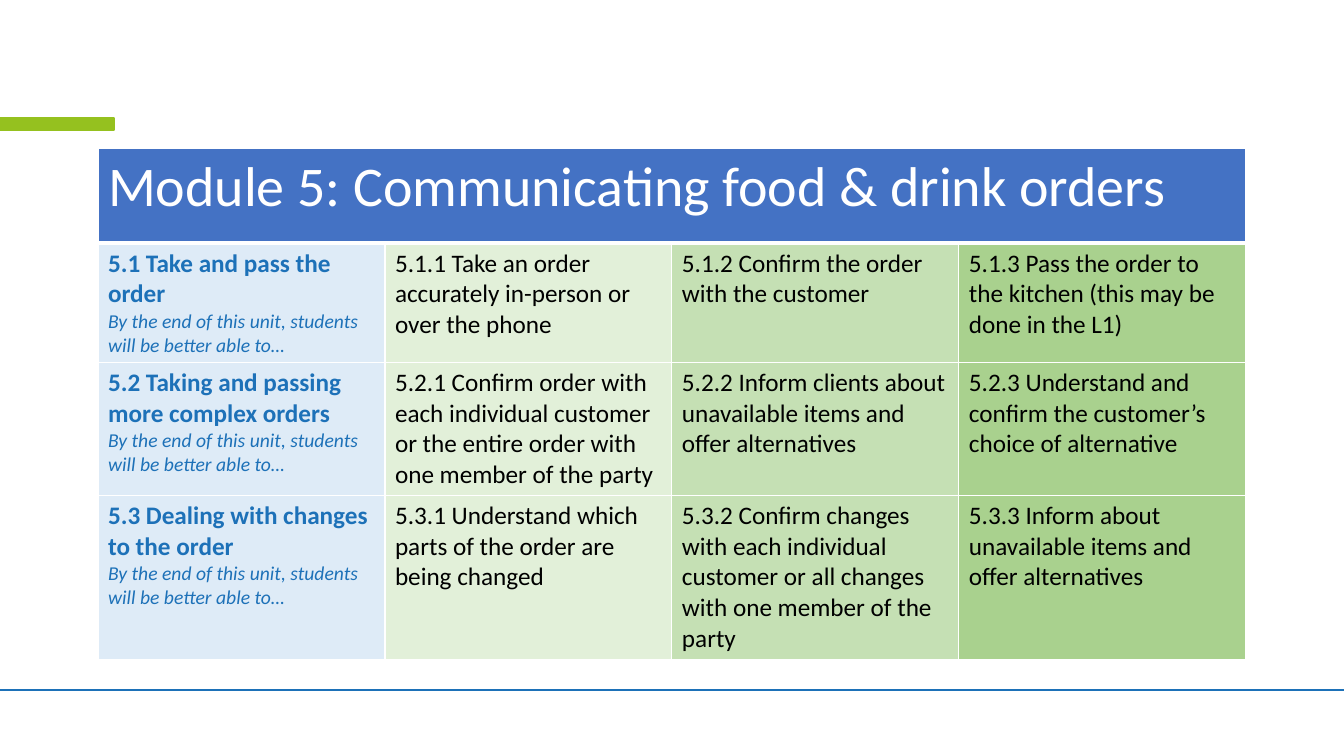
"""Build the Module 5 curriculum table slide."""
import pptx
import pptx.dml.color
import pptx.enum.shapes
import pptx.oxml.ns
import pptx.util
from lxml import etree

RGBColor = pptx.dml.color.RGBColor
WHITE = RGBColor(0xFF, 0xFF, 0xFF)
BLACK = RGBColor(0x00, 0x00, 0x00)
BLUE = RGBColor(0x1D, 0x71, 0xB8)
LIME = RGBColor(0x95, 0xC1, 0x1F)
HEADER_BLUE = RGBColor(0x44, 0x72, 0xC4)
COLUMN_FILLS = (
    RGBColor(0xDE, 0xEB, 0xF7),
    RGBColor(0xE2, 0xF0, 0xD9),
    RGBColor(0xC5, 0xE0, 0xB4),
    RGBColor(0xA9, 0xD1, 0x8E),
)

FONT = "Calibri"
TITLE = "Module 5: Communicating food & drink orders"
AIM = "By the end of this unit, students will be better able to…"
UNITS = [
    ("5.1 Take and pass the order",
     "5.1.1 Take an order accurately in-person or over the phone",
     "5.1.2 Confirm the order with the customer",
     "5.1.3 Pass the order to the kitchen (this may be done in the L1)"),
    ("5.2 Taking and passing more complex orders",
     "5.2.1 Confirm order with each individual customer or the entire order with one member of the party",
     "5.2.2 Inform clients about unavailable items and offer alternatives",
     "5.2.3 Understand and confirm the customer’s choice of alternative"),
    ("5.3 Dealing with changes to the order",
     "5.3.1 Understand which parts of the order are being changed",
     "5.3.2 Confirm changes with each individual customer or all changes with one member of the party",
     "5.3.3 Inform about unavailable items and offer alternatives"),
]

SLIDE_WIDTH, SLIDE_HEIGHT = 1344, 756
TABLE_LEFT, TABLE_TOP = 98, 148
COLUMN_WIDTH = 287
ROW_HEIGHTS = (95, 119, 133, 164)
RULE_TOP = 690
ACCENT_BAR = (0, 118, 114, 12)


def px(length):
    return pptx.util.Emu(round(length * 914400 / 100.8))


def set_borders(cell, bottom=1):
    properties = cell._tc.get_or_add_tcPr()
    for side, points in (("L", 1), ("R", 1), ("T", 1), ("B", bottom)):
        line = etree.SubElement(properties, pptx.oxml.ns.qn(f"a:ln{side}"), w=str(pptx.util.Pt(points)))
        fill = etree.SubElement(line, pptx.oxml.ns.qn("a:solidFill"))
        etree.SubElement(fill, pptx.oxml.ns.qn("a:srgbClr"), val=str(WHITE))


def set_fill(cell, color):
    cell.fill.solid()
    cell.fill.fore_color.rgb = color


def write(para, text, size, color, bold=False, italic=False):
    para.text = text
    font = para.font
    font.name, font.size = FONT, pptx.util.Pt(size)
    font.bold, font.italic = bold, italic
    font.color.rgb = color


def add_decoration(page):
    rule = page.shapes.add_connector(
        pptx.enum.shapes.MSO_CONNECTOR.STRAIGHT, 0, px(RULE_TOP), px(SLIDE_WIDTH), px(RULE_TOP))
    rule.line.color.rgb = BLUE
    rule.line.width = pptx.util.Pt(1)
    etree.SubElement(rule._element.spPr, pptx.oxml.ns.qn("a:effectLst"))

    bar = page.shapes.add_shape(pptx.enum.shapes.MSO_SHAPE.RECTANGLE, *map(px, ACCENT_BAR))
    bar.shadow.inherit = False
    bar.fill.solid()
    bar.fill.fore_color.rgb = LIME
    bar.line.color.rgb = LIME
    bar.line.width = pptx.util.Pt(1)


def add_module_table(page):
    columns = len(COLUMN_FILLS)
    table = page.shapes.add_table(
        len(ROW_HEIGHTS), columns, px(TABLE_LEFT), px(TABLE_TOP),
        px(COLUMN_WIDTH * columns), px(sum(ROW_HEIGHTS))).table
    table.horz_banding = False
    for column in table.columns:
        column.width = px(COLUMN_WIDTH)
    for row, height in zip(table.rows, ROW_HEIGHTS):
        row.height = px(height)

    header = table.cell(0, 0)
    header.merge(table.cell(0, columns - 1))
    for cell in table.rows[0].cells:
        set_borders(cell, bottom=3)
        set_fill(cell, HEADER_BLUE)
    write(header.text_frame.paragraphs[0], TITLE, 40, WHITE)

    for row_index, unit in enumerate(UNITS, start=1):
        for column_index, (text, color) in enumerate(zip(unit, COLUMN_FILLS)):
            cell = table.cell(row_index, column_index)
            set_borders(cell)
            set_fill(cell, color)
            frame = cell.text_frame
            is_unit = column_index == 0
            write(frame.paragraphs[0], text, 18, BLUE if is_unit else BLACK, bold=is_unit)
            if is_unit:
                write(frame.add_paragraph(), AIM, 14, BLUE, italic=True)


def main():
    deck = pptx.Presentation()
    deck.slide_width, deck.slide_height = px(SLIDE_WIDTH), px(SLIDE_HEIGHT)
    page = deck.slides.add_slide(deck.slide_layouts[6])
    add_decoration(page)
    add_module_table(page)
    deck.save("out.pptx")


if __name__ == "__main__":
    main()
